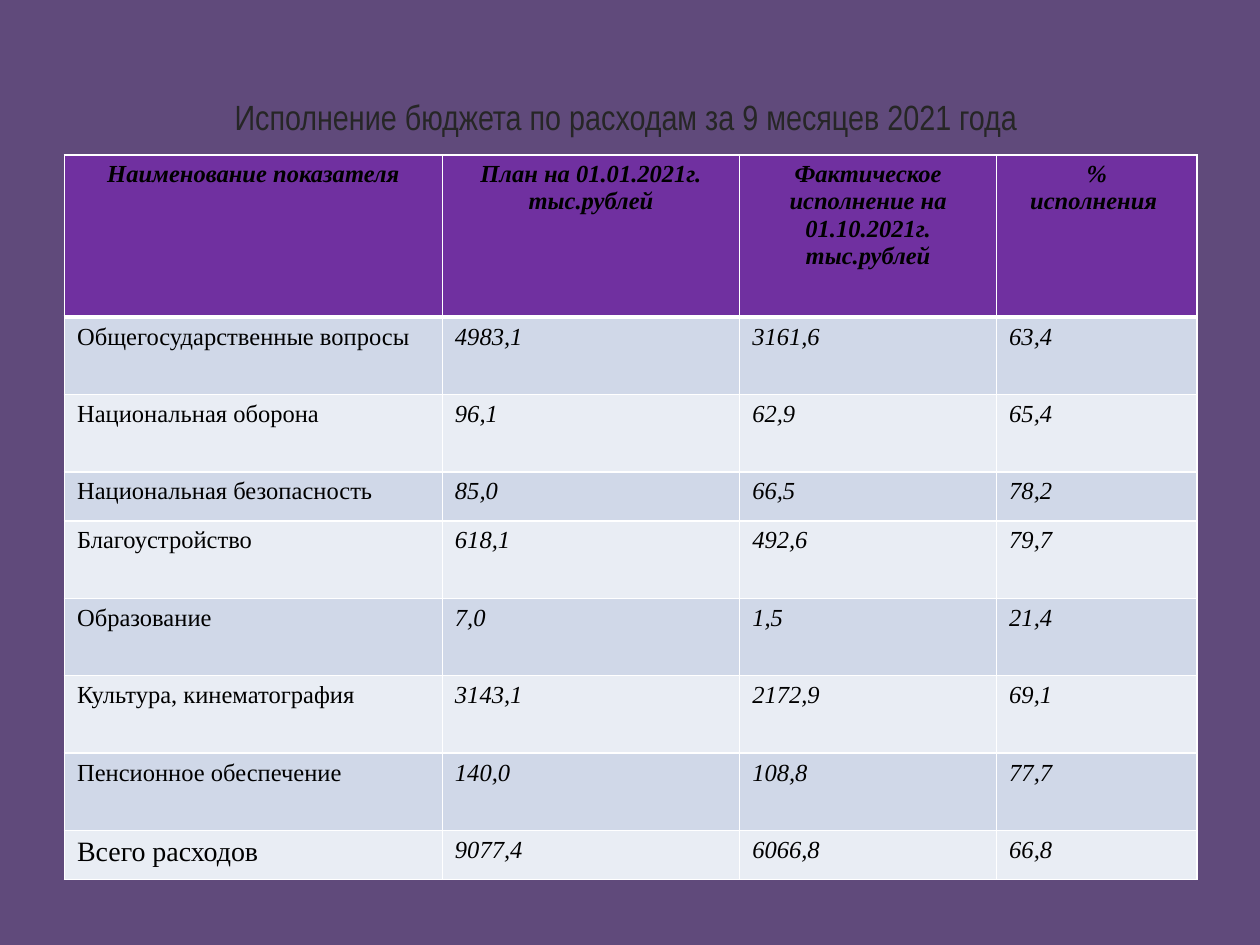
from dataclasses import dataclass

from lxml import etree
from pptx import Presentation
from pptx import util as u
from pptx.dml import color
from pptx.enum import text
from pptx.oxml import ns


@dataclass(frozen=True)
class Theme:
    background: str = "604A7B"
    title_color: str = "262626"
    text_color: str = "000000"
    header_fill: str = "7030A0"
    band_fills: tuple = ("D0D8E8", "E9EDF4")
    border: str = "FFFFFF"
    title_font: str = "Arial Narrow"
    table_font: str = "Times New Roman"
    title_size: int = 20
    table_size: int = 14
    total_size: int = 16
    border_width: int = 1
    header_rule: int = 3


THEME = Theme()

TITLE = "Исполнение бюджета по расходам за 9 месяцев 2021 года "
HEADER = (
    "Наименование показателя",
    "План на 01.01.2021г. тыс.рублей",
    "Фактическое исполнение на 01.10.2021г. тыс.рублей",
    "%\nисполнения ",
)
EXPENSES = (
    ("Общегосударственные вопросы", "4983,1", "3161,6", "63,4"),
    ("Национальная оборона", "96,1", "62,9", "65,4"),
    ("Национальная безопасность", "85,0", "66,5", "78,2"),
    ("Благоустройство", "618,1", "492,6", "79,7"),
    ("Образование", "7,0", "1,5", "21,4"),
    ("Культура, кинематография", "3143,1", "2172,9", "69,1"),
    ("Пенсионное обеспечение", "140,0", "108,8", "77,7"),
    ("Всего расходов", "9077,4", "6066,8", "66,8"),
)
COLUMN_SHARES = (3, 2.36, 2.04, 1.59)
HEADER_HEIGHT, TALL_ROW, SHORT_ROW = 3.27, 1.56, 0.99
SHORT_ROWS = (3, 8)


def format_text(frame, font, size, rgb, bold=False, italic=False, align=None):
    for paragraph in frame.paragraphs:
        paragraph.alignment = align
        for run in paragraph.runs:
            run.font.name = font
            run.font.size = u.Pt(size)
            run.font.bold = bold
            run.font.italic = italic
            run.font.color.rgb = color.RGBColor.from_string(rgb)


def set_borders(cell, widths):
    """Draw the left, right, top and bottom lines, in that order."""
    properties = cell._tc.get_or_add_tcPr()
    for index, (side, width) in enumerate(zip("LRTB", widths)):
        line = etree.Element(ns.qn(f"a:ln{side}"), w=str(u.Pt(width)))
        fill = etree.SubElement(line, ns.qn("a:solidFill"))
        etree.SubElement(fill, ns.qn("a:srgbClr"), val=THEME.border)
        properties.insert(index, line)


def add_title(slide, left, top, width, height):
    title = slide.shapes.title
    title.left, title.top = u.Cm(left), u.Cm(top)
    title.width, title.height = u.Cm(width), u.Cm(height)
    title.text_frame.text = TITLE
    title.text_frame.vertical_anchor = text.MSO_ANCHOR.MIDDLE
    format_text(title.text_frame, THEME.title_font, THEME.title_size,
                THEME.title_color, align=text.PP_ALIGN.CENTER)


def fill_cell(cell, row, column, content):
    is_header = row == 0
    is_total_label = row == len(EXPENSES) and column == 0
    cell.text_frame.text = content
    format_text(
        cell.text_frame,
        THEME.table_font,
        THEME.total_size if is_total_label else THEME.table_size,
        THEME.text_color,
        bold=is_header,
        italic=is_header or column > 0,
        align=text.PP_ALIGN.CENTER if is_header else text.PP_ALIGN.LEFT,
    )
    fill = THEME.header_fill if is_header else THEME.band_fills[(row - 1) % 2]
    cell.fill.solid()
    cell.fill.fore_color.rgb = color.RGBColor.from_string(fill)
    thin, thick = THEME.border_width, THEME.header_rule
    set_borders(cell, (thin, thin, thick if row == 1 else thin,
                       thick if is_header else thin))


def add_budget_table(slide, left, top, width, height):
    rows = (HEADER, *EXPENSES)
    table = slide.shapes.add_table(
        len(rows), len(HEADER),
        u.Cm(left), u.Cm(top), u.Cm(width), u.Cm(height)).table

    # Columns share the width of the box
    for column, share in zip(table.columns, COLUMN_SHARES):
        column.width = u.Cm(width * share / sum(COLUMN_SHARES))

    for index, contents in enumerate(rows):
        if index == 0:
            row_height = HEADER_HEIGHT
        else:
            row_height = SHORT_ROW if index in SHORT_ROWS else TALL_ROW
        table.rows[index].height = u.Cm(row_height)
        for column, content in enumerate(contents):
            fill_cell(table.cell(index, column), index, column, content)


def main():
    presentation = Presentation()
    presentation.slide_width = u.Cm(25.4)
    presentation.slide_height = u.Cm(19.05)
    slide = presentation.slides.add_slide(presentation.slide_layouts[5])

    # Background
    slide.background.fill.solid()
    slide.background.fill.fore_color.rgb = color.RGBColor.from_string(THEME.background)

    # Title above the table
    add_title(slide, 1.27, 0.76, 22.86, 3.18)
    add_budget_table(slide, 1.3, 3.12, 22.83, 14.7)

    presentation.save("out.pptx")


if __name__ == "__main__":
    main()
